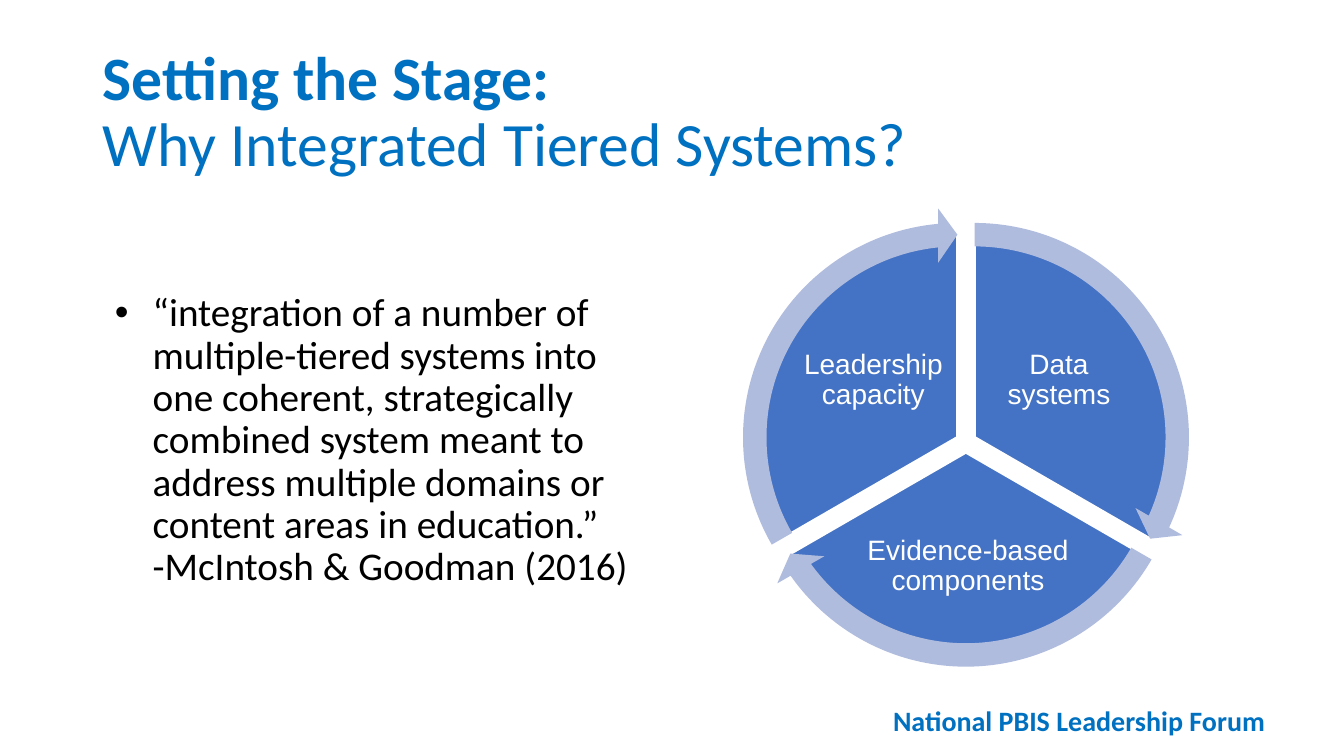
from lxml import etree
from pptx import Presentation, util as u
from pptx.dml.color import RGBColor
from pptx.enum import shapes, text
from pptx.oxml.ns import qn

BLUE, SECTOR, ARROW, WHITE, BLACK = "0070C0", "4472C4", "B0BCDE", "FFFFFF", "000000"
TITLE = ("Setting the Stage:", "Why Integrated Tiered Systems?")
QUOTE = ("“integration of a number of multiple-tiered systems into one coherent, "
         "strategically combined system meant to address multiple domains or "
         "content areas in education.”", "-McIntosh & Goodman (2016)")
FOOTER = "National PBIS Leadership Forum"

# Label, label box, left and top of the sector (points), start angle (degrees)
SECTORS = [
    ("Data systems", (704.2, 228.2, 104.4, 87.1), (550, 166.3), 270),
    ("Evidence-based components", (613.4, 366.5, 156.2, 76.3), (543.8, 176.9), 30),
    ("Leadership capacity", (571.7, 228.2, 104.4, 87.1), (537.8, 166.3), 150),
]
PIE_SIZE = 292.3
RING = 18          # the arrow frame reaches this far beyond its sector
SWEEP = 120
HEAD_ANGLE = 5.46
ANGLE_UNIT = 0.6   # one degree in adjustment units


def color(value):
    return RGBColor.from_string(value)


def points(*values):
    return [u.Pt(value) for value in values]


def write(box, content, size, font, ink, align, spacing=0.9, margins=(7.2, 3.6)):
    frame = box.text_frame
    frame.word_wrap = True
    frame.auto_size = text.MSO_AUTO_SIZE.NONE
    frame.vertical_anchor = text.MSO_ANCHOR.MIDDLE
    frame.margin_left = frame.margin_right = u.Pt(margins[0])
    frame.margin_top = frame.margin_bottom = u.Pt(margins[1])
    para = frame.paragraphs[0]
    para.text = content
    para.alignment = align
    para.line_spacing = spacing
    para.space_before = u.Pt(0)
    for span in para.runs:
        span.font.size = u.Pt(size)
        span.font.name = font
        span.font.color.rgb = color(ink)
    return para


def add_part(page, kind, frame, fill, adjustments):
    part = page.shapes.add_shape(kind, *points(*frame))
    part.shadow.inherit = False
    part.fill.solid()
    part.fill.fore_color.rgb = color(fill)
    part.line.fill.background()
    for index, value in enumerate(adjustments):
        part.adjustments[index] = value
    return part


deck = Presentation()
deck.slide_width, deck.slide_height = points(960, 540)
page = deck.slides.add_slide(deck.slide_layouts[5])
LEFT, CENTER = text.PP_ALIGN.LEFT, text.PP_ALIGN.CENTER

# Title
title = page.shapes.title
title.left, title.top, title.width, title.height = points(66, 28.75, 828, 104.4)
para = write(title, "\v".join(TITLE), 44, "Calibri", BLUE, LEFT)
for span, bold in zip(para.runs, (True, False)):
    span.font.bold = bold

# Bulleted quotation
box = page.shapes.add_textbox(*points(66, 143.75, 408, 342.6))
para = write(box, "\v".join(QUOTE), 28, "Calibri", BLACK, LEFT)
props = para._p.get_or_add_pPr()
props.set("marL", str(u.Pt(36)))
props.set("indent", str(u.Pt(-27)))
etree.SubElement(props, qn("a:buFont"), typeface="Arial")
etree.SubElement(props, qn("a:buChar"), char="•")

# Footer
box = page.shapes.add_textbox(*points(603.4, 499, 334.8, 31.5))
para = write(box, FOOTER, 20, "Calibri", BLUE, CENTER, spacing=1)
para.runs[0].font.bold = True

# Wheel sectors with their labels
for label, label_box, (left, top), start in SECTORS:
    end = (start + SWEEP) % 360
    pie = add_part(page, shapes.MSO_SHAPE.PIE, (left, top, PIE_SIZE, PIE_SIZE), SECTOR,
                   (start * ANGLE_UNIT, end * ANGLE_UNIT))
    pie.line.color.rgb = color(WHITE)
    pie.line.width = u.Pt(2)
    box = page.shapes.add_textbox(*points(*label_box))
    write(box, label, 20, "Arial", WHITE, CENTER, margins=(2, 2))

# Arrows around the wheel
for label, label_box, (left, top), start in SECTORS:
    end = (start + SWEEP) % 360
    size = PIE_SIZE + 2 * RING
    add_part(page, shapes.MSO_SHAPE.CIRCULAR_ARROW, (left - RING, top - RING, size, size), ARROW,
             (0.051, HEAD_ANGLE * ANGLE_UNIT, (end - HEAD_ANGLE) * ANGLE_UNIT,
              start * ANGLE_UNIT, 0.059))

deck.save("out.pptx")
